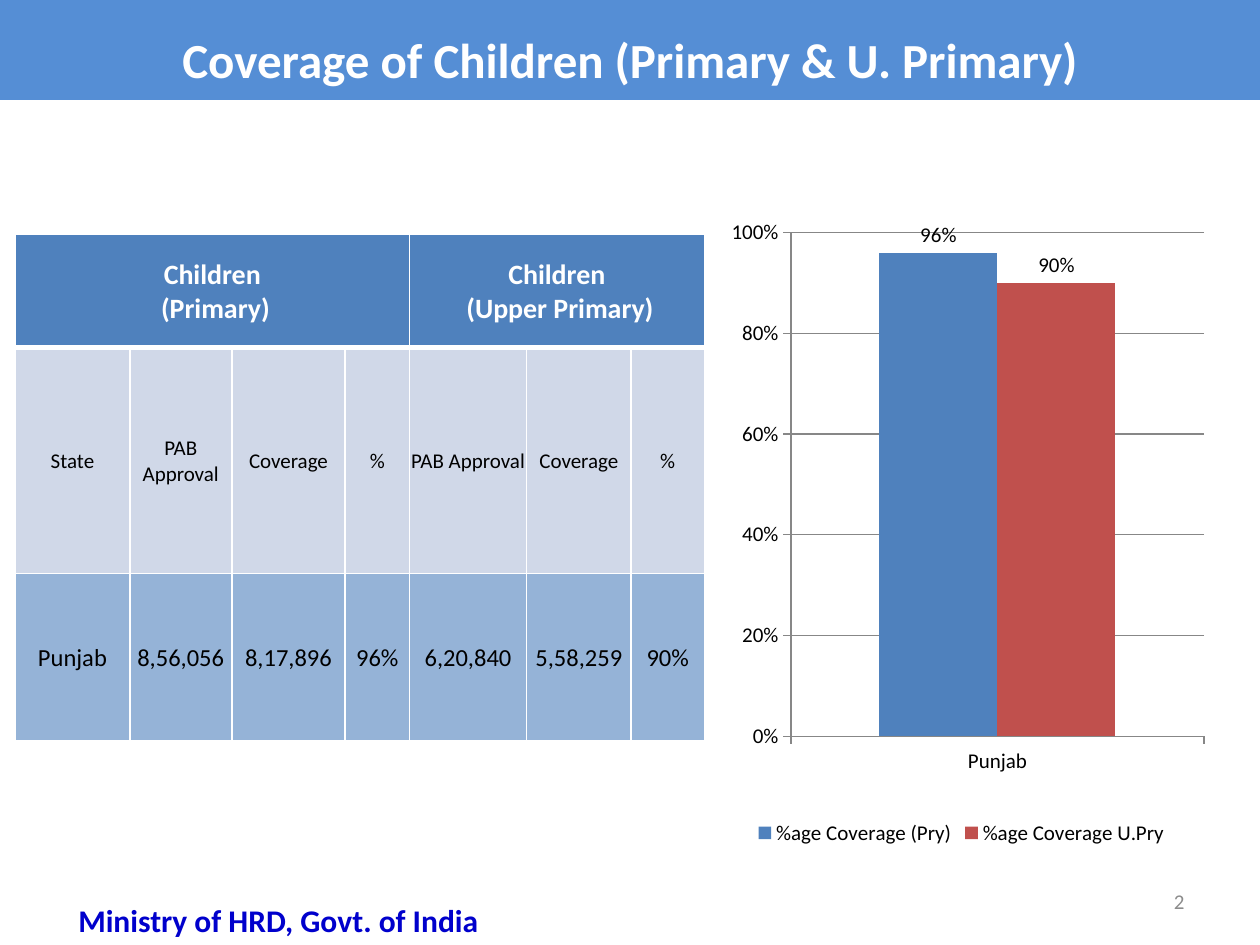
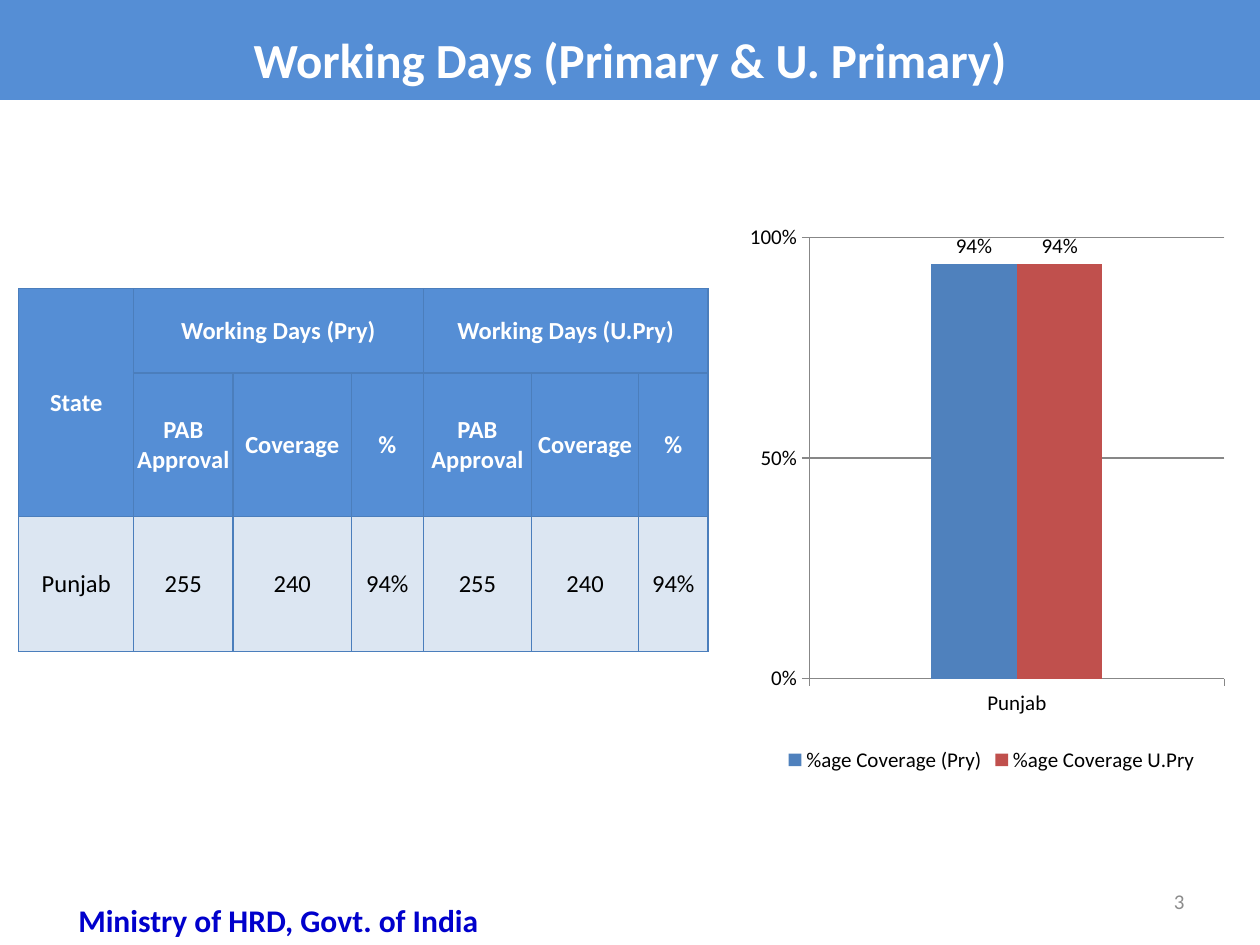
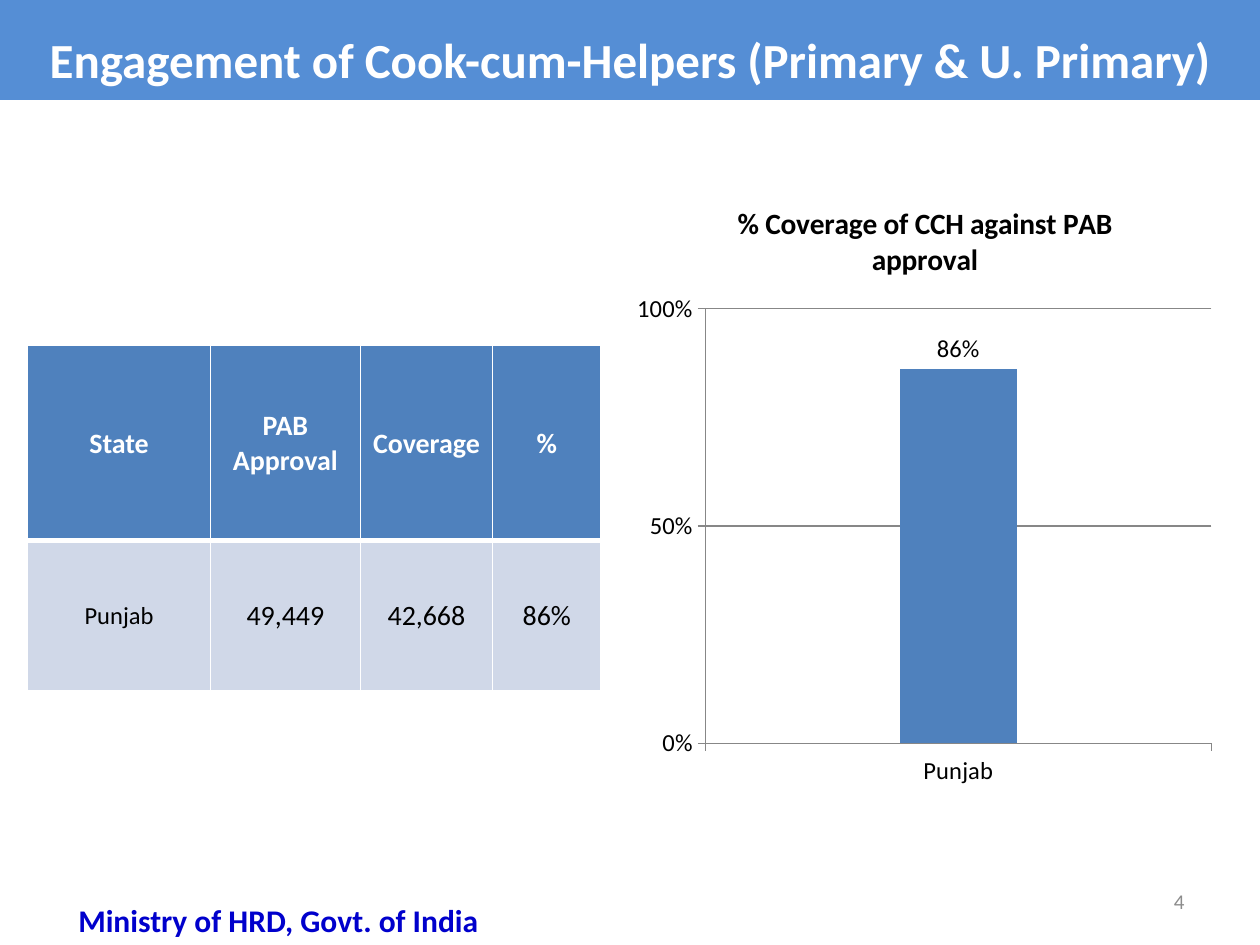
from lxml import etree
from pptx import Presentation
from pptx.chart.data import CategoryChartData
from pptx.dml.color import RGBColor
from pptx.enum.chart import XL_CHART_TYPE, XL_LABEL_POSITION, XL_LEGEND_POSITION, XL_TICK_MARK
from pptx.enum.text import MSO_ANCHOR, MSO_AUTO_SIZE, PP_ALIGN
from pptx.oxml import parse_xml
from pptx.oxml.ns import nsdecls, qn
from pptx.util import Pt

PX = 9144  # 100 px to the inch
FONT = "Calibri"
MIDDLE, TOP = MSO_ANCHOR.MIDDLE, MSO_ANCHOR.TOP
CENTER, RIGHT = PP_ALIGN.CENTER, PP_ALIGN.RIGHT
COLORS = {
    "band": "558ED5", "white": "FFFFFF", "black": "000000", "footer": "0000CC",
    "number": "8C8C8C", "blue": "4F81BD", "red": "C0504D", "pale": "D0D8E8",
    "sky": "95B3D7", "mist": "DCE6F2", "border": "4B7EBC", "grid": "878787",
}
RGB = {name: RGBColor.from_string(value) for name, value in COLORS.items()}
SERIES_COLORS = ("blue", "red")
PRIMARY, UPPER = "%age Coverage (Pry)", "%age Coverage U.Pry"
MEASURES = ["PAB Approval", "Coverage", "%"]

# Row styles: fill, text colour, bold, size of first cell, size of the others, bottom border
SLIDES = [
    {
        "title": "Coverage of Children (Primary & U. Primary)",
        "table": {
            "at": (12, 186), "columns": (91, 81, 90, 51, 93, 83, 58), "rows": (90, 179, 133),
            "border": ("white", 1),
            "cells": [
                ["Children\n (Primary)", "", "", "", "Children\n (Upper Primary)", "", ""],
                ["State"] + MEASURES * 2,
                ["Punjab", "8,56,056", "8,17,896", "96%", "6,20,840", "5,58,259", "90%"],
            ],
            "merges": [(0, 0, 0, 3), (0, 4, 0, 6)],
            "styles": [("blue", "white", True, 16, 16, 3),
                       ("pale", "black", False, 12, 12, 1),
                       ("sky", "black", False, 14, 14, 1)],
        },
        "chart": {
            "at": (558, 142, 410, 533), "size": 12, "gap": 150, "step": 0.2,
            "plot": (0.17, 0.08, 0.8, 0.75),
            "series": [(PRIMARY, 0.96), (UPPER, 0.9)],
        },
    },
    {
        "title": "Working Days (Primary & U. Primary)",
        "table": {
            "at": (15, 229), "columns": (91, 79, 94, 57, 86, 85, 55), "rows": (67, 114, 107),
            "border": ("border", 0.75),
            "cells": [
                ["State", "Working Days (Pry)", "", "", "Working Days (U.Pry)", "", ""],
                [""] + MEASURES * 2,
                ["Punjab"] + ["255", "240", "94%"] * 2,
            ],
            "merges": [(0, 0, 1, 0), (0, 1, 0, 3), (0, 4, 0, 6)],
            "styles": [("band", "white", True, 14, 14, 0.75),
                       ("band", "white", True, 14, 14, 0.75),
                       ("mist", "black", False, 14, 14, 0.75)],
        },
        "chart": {
            "at": (586, 156, 402, 461), "size": 12, "gap": 285, "step": 0.5,
            "plot": (0.14, 0.07, 0.82, 0.76),
            "series": [(PRIMARY, 0.94), (UPPER, 0.94)],
        },
    },
    {
        "title": "Engagement of Cook-cum-Helpers (Primary & U. Primary)",
        "table": {
            "at": (22, 274), "columns": (145, 119, 105, 86), "rows": (155, 119),
            "border": ("white", 1),
            "cells": [["State"] + MEASURES, ["Punjab", "49,449", "42,668", "86%"]],
            "merges": [],
            "styles": [("blue", "white", True, 16, 16, 3),
                       ("pale", "black", False, 14, 16, 1)],
        },
        "chart": {
            "at": (492, 142, 484, 515), "size": 14, "gap": 330, "step": 0.5,
            "plot": (0.14, 0.2, 0.83, 0.67),
            "title": "% Coverage of CCH against PAB approval",
            "series": [("Series 1", 0.86)],
        },
    },
]


def style_text(text_frame, size, color, bold=False, align=CENTER):
    for paragraph in text_frame.paragraphs:
        paragraph.alignment = align
        values = {"name": FONT, "size": Pt(size), "bold": bold}
        for attribute, value in values.items():
            setattr(paragraph.font, attribute, value)
        paragraph.font.color.rgb = RGB[color]


def set_border(cell, color, widths):
    """Draw the cell's borders; widths are points by side letter, in L, R, T, B order."""
    properties = cell._tc.get_or_add_tcPr()
    for side, width in widths.items():
        line = etree.SubElement(properties, qn(f"a:ln{side}"), w=str(Pt(width)))
        fill = etree.SubElement(line, qn("a:solidFill"))
        etree.SubElement(fill, qn("a:srgbClr"), val=COLORS[color])


presentation = Presentation()
presentation.slide_width, presentation.slide_height = 1000 * PX, 750 * PX
title_only = presentation.slide_layouts[5]

for slide_number, content in enumerate(SLIDES, start=2):
    slide = presentation.slides.add_slide(title_only)

    # Title band
    title = slide.shapes.title
    title.left, title.top, title.width, title.height = 0, 0, 1000 * PX, 75 * PX
    title.fill.solid()
    title.fill.fore_color.rgb = RGB["band"]
    title.text_frame.text = content["title"]
    title.text_frame.vertical_anchor = MIDDLE
    title.text_frame.auto_size = MSO_AUTO_SIZE.SHAPE_TO_FIT_TEXT
    title.text_frame.paragraphs[0].line_spacing = 1.4
    style_text(title.text_frame, 28, "white", bold=True)

    # Table
    spec_table = content["table"]
    columns, rows = spec_table["columns"], spec_table["rows"]
    left, top = spec_table["at"]
    table = slide.shapes.add_table(
        len(rows), len(columns), left * PX, top * PX, sum(columns) * PX, sum(rows) * PX).table
    table.first_row = table.horz_banding = False
    for column, width in zip(table.columns, columns):
        column.width = width * PX
    for row, height in zip(table.rows, rows):
        row.height = height * PX
    border_color, border_width = spec_table["border"]
    top_width = border_width
    for row, texts, style in zip(table.rows, spec_table["cells"], spec_table["styles"]):
        fill, color, bold, first_size, size, bottom_width = style
        for index, (cell, text) in enumerate(zip(row.cells, texts)):
            cell.text = text
            cell.vertical_anchor = MIDDLE
            cell.margin_left = cell.margin_right = cell.margin_top = PX
            cell.margin_bottom = 0
            style_text(cell.text_frame, size if index else first_size, color, bold)
            set_border(cell, border_color, {"L": border_width, "R": border_width,
                                            "T": top_width, "B": bottom_width})
            cell.fill.solid()
            cell.fill.fore_color.rgb = RGB[fill]
        top_width = bottom_width
    for first_row, first_column, last_row, last_column in spec_table["merges"]:
        table.cell(first_row, first_column).merge(table.cell(last_row, last_column))

    # Chart
    coverage = content["chart"]
    data = CategoryChartData(number_format="0%")
    data.categories = ["Punjab"]
    for name, value in coverage["series"]:
        data.add_series(name, [value])
    chart = slide.shapes.add_chart(
        XL_CHART_TYPE.COLUMN_CLUSTERED, *(length * PX for length in coverage["at"]), data).chart
    chart.font.name, chart.font.size = FONT, Pt(coverage["size"])
    chart.font.color.rgb = RGB["black"]
    chart.has_title = "title" in coverage
    if chart.has_title:
        chart.chart_title.text_frame.text = coverage["title"]
        style_text(chart.chart_title.text_frame, 16.8, "black", bold=True)
    chart.has_legend = len(coverage["series"]) > 1
    if chart.has_legend:
        chart.legend.position = XL_LEGEND_POSITION.BOTTOM
        chart.legend.include_in_layout = False

    plot = chart.plots[0]
    plot.gap_width, plot.overlap, plot.vary_by_categories = coverage["gap"], 0, False
    for series, color in zip(plot.series, SERIES_COLORS):
        series.format.fill.solid()
        series.format.fill.fore_color.rgb = RGB[color]
        labels = series.data_labels
        labels.show_value = True
        labels.number_format, labels.number_format_is_linked = "0%", False
        labels.position = XL_LABEL_POSITION.OUTSIDE_END

    value_axis = chart.value_axis
    value_axis.minimum_scale, value_axis.maximum_scale = 0, 1
    value_axis.major_unit = coverage["step"]
    value_axis.has_major_gridlines = True
    value_axis.tick_labels.number_format = "0%"
    value_axis.tick_labels.number_format_is_linked = False
    for axis in (value_axis, chart.category_axis):
        axis.major_tick_mark = XL_TICK_MARK.OUTSIDE
    for lines in (value_axis, chart.category_axis, value_axis.major_gridlines):
        lines.format.line.color.rgb = RGB["grid"]
        lines.format.line.width = Pt(0.75)

    plot_area = chart._chartSpace.chart.plotArea
    for layout in plot_area.findall(qn("c:layout")):
        plot_area.remove(layout)
    modes = '<c:xMode val="edge"/><c:yMode val="edge"/>'
    sizes = "".join(f'<c:{tag} val="{value}"/>' for tag, value in zip("xywh", coverage["plot"]))
    plot_area.insert(0, parse_xml(
        f'<c:layout {nsdecls("c")}><c:manualLayout><c:layoutTarget val="inner"/>'
        f"{modes}{sizes}</c:manualLayout></c:layout>"))

    # Slide number and footer
    for text, box, anchor, size, color, bold, align in (
        (str(slide_number), (717, 695, 233, 40), MIDDLE, 12, "number", False, RIGHT),
        ("Ministry of HRD, Govt. of India", (25, 710, 392, 40), TOP, 18, "footer", True, CENTER),
    ):
        text_box = slide.shapes.add_textbox(*(length * PX for length in box))
        text_box.text_frame.word_wrap = True
        text_box.text_frame.vertical_anchor = anchor
        text_box.text_frame.text = text
        style_text(text_box.text_frame, size, color, bold, align)

presentation.save("out.pptx")
